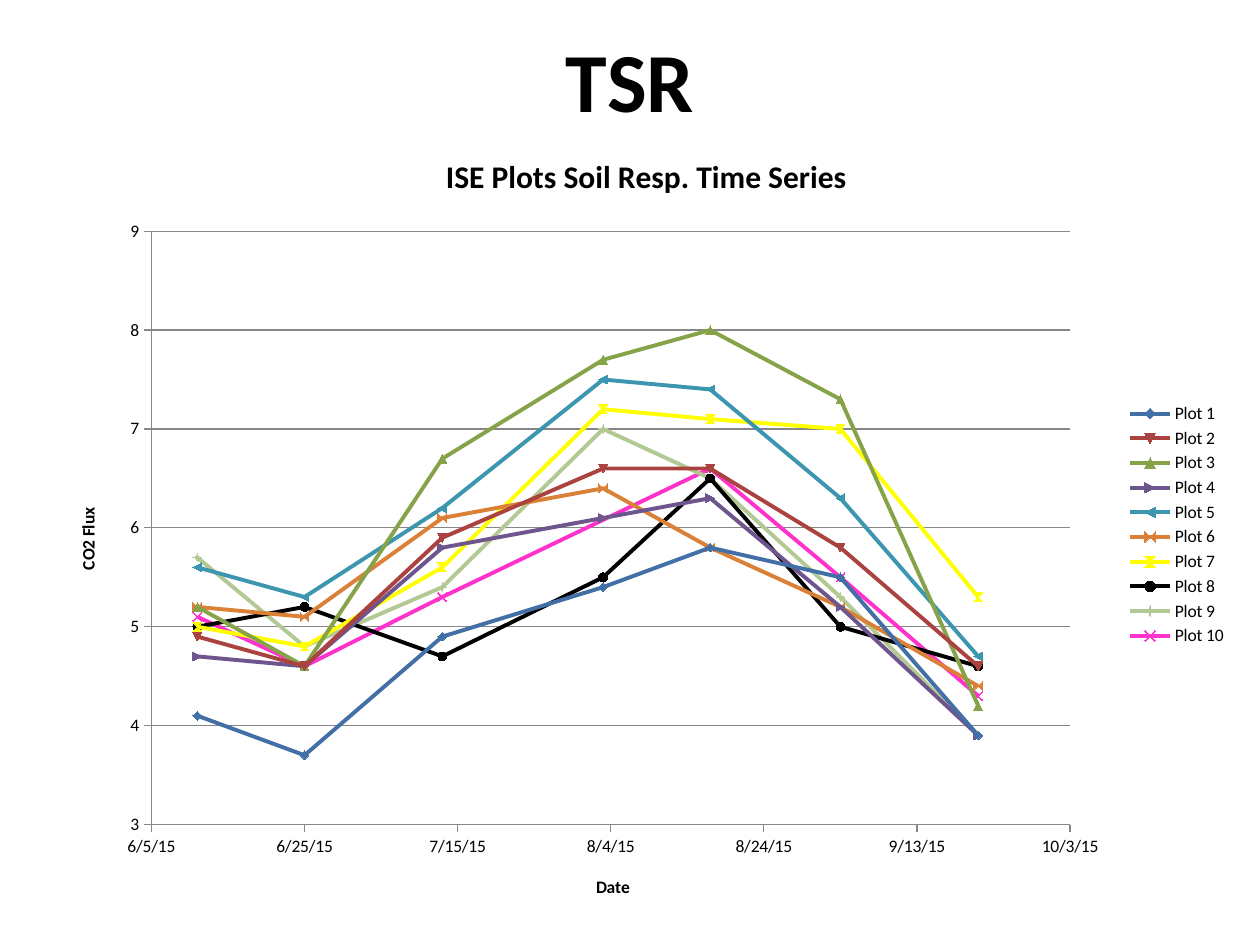
from lxml import etree
from pptx import Presentation
from pptx.chart.data import XyChartData
from pptx.dml.color import RGBColor
from pptx.enum.chart import XL_CHART_TYPE, XL_LEGEND_POSITION, XL_MARKER_STYLE, XL_TICK_MARK
from pptx.enum.text import MSO_ANCHOR, PP_ALIGN
from pptx.oxml.ns import qn
from pptx.util import Inches, Pt

FONT = "Calibri"
BLACK = RGBColor(0x00, 0x00, 0x00)
GRAY = RGBColor(0x86, 0x86, 0x86)
BLUE = RGBColor(0x42, 0x6F, 0xA6)
RED = RGBColor(0xAA, 0x43, 0x3F)
GREEN = RGBColor(0x87, 0xA3, 0x4A)
PURPLE = RGBColor(0x6F, 0x55, 0x8D)
TEAL = RGBColor(0x3C, 0x96, 0xAF)
ORANGE = RGBColor(0xDA, 0x81, 0x37)
YELLOW = RGBColor(0xFF, 0xFF, 0x00)
LIGHT_GREEN = RGBColor(0xB3, 0xC9, 0x94)
PINK = RGBColor(0xFF, 0x33, 0xCC)

# Sampling days counted from 6/5/15, the start of the date axis
START_DATE = 42160
SAMPLE_DAYS = [6, 20, 38, 59, 73, 90, 108]

# Flux per plot on each sampling day; None is a missing sample
PLOTS = [
    (BLUE, [4.1, 3.7, 4.9, 5.4, 5.8, 5.5, 3.9]),
    (RED, [4.9, 4.6, 5.9, 6.6, 6.6, 5.8, 4.6]),
    (GREEN, [5.2, 4.6, 6.7, 7.7, 8, 7.3, 4.2]),
    (PURPLE, [4.7, 4.6, 5.8, 6.1, 6.3, 5.2, 3.9]),
    (TEAL, [5.6, 5.3, 6.2, 7.5, 7.4, 6.3, 4.7]),
    (ORANGE, [5.2, 5.1, 6.1, 6.4, 5.8, 5.2, 4.4]),
    (YELLOW, [5, 4.8, 5.6, 7.2, 7.1, 7, 5.3]),
    (BLACK, [5, 5.2, 4.7, 5.5, 6.5, 5, 4.6]),
    (LIGHT_GREEN, [5.7, 4.8, 5.4, 7, 6.5, 5.3, 3.9]),
    (PINK, [5.1, 4.6, 5.3, None, 6.6, 5.5, 4.3]),
]


def write_text(text_frame, text, size):
    paragraph = text_frame.paragraphs[0]
    paragraph.alignment = PP_ALIGN.CENTER
    run = paragraph.add_run()
    run.text = text
    run.font.name = FONT
    run.font.size = Pt(size)
    run.font.bold = True
    run.font.color.rgb = BLACK


presentation = Presentation()
presentation.slide_width = Inches(10)
presentation.slide_height = Inches(7.5)
slide = presentation.slides.add_slide(presentation.slide_layouts[6])

# Slide title
title_box = slide.shapes.add_textbox(Inches(0.5), Inches(0), Inches(9), Inches(1.25))
title_box.text_frame.word_wrap = True
title_box.text_frame.vertical_anchor = MSO_ANCHOR.MIDDLE
write_text(title_box.text_frame, "TSR", 48)

# Chart data
chart_data = XyChartData()
for number, (color, fluxes) in enumerate(PLOTS, start=1):
    plot_series = chart_data.add_series(f"Plot {number}")
    for day, flux in zip(SAMPLE_DAYS, fluxes):
        if flux is not None:
            plot_series.add_data_point(START_DATE + day, flux)

chart = slide.shapes.add_chart(
    XL_CHART_TYPE.XY_SCATTER_LINES,
    Inches(0.42), Inches(1), Inches(9.42), Inches(6.33), chart_data,
).chart
chart.font.name = FONT
chart.font.size = Pt(10)
chart.font.color.rgb = BLACK
chart.plots[0].vary_by_categories = False
write_text(chart.chart_title.text_frame, "ISE Plots Soil Resp. Time Series", 18)

# Legend
chart.has_legend = True
chart.legend.position = XL_LEGEND_POSITION.RIGHT
chart.legend.include_in_layout = False

# Lines and markers
for series, (color, fluxes) in zip(chart.plots[0].series, PLOTS):
    series.smooth = False
    series.format.line.color.rgb = color
    series.format.line.width = Pt(2.25)
    series.marker.style = XL_MARKER_STYLE.AUTOMATIC
    series.marker.size = 5
    series.marker.format.fill.solid()
    series.marker.format.fill.fore_color.rgb = color
    series.marker.format.line.color.rgb = color

# Axes
axis_settings = [
    (chart.category_axis, "Date", "m/d/yy", {
        "minimum_scale": START_DATE, "maximum_scale": START_DATE + 120,
        "major_unit": 20, "has_major_gridlines": False}),
    (chart.value_axis, "CO2 Flux", "General", {
        "minimum_scale": 3, "maximum_scale": 9,
        "major_unit": 1, "has_major_gridlines": True}),
]
for axis, title, number_format, settings in axis_settings:
    for name, value in settings.items():
        setattr(axis, name, value)
    axis.major_tick_mark = XL_TICK_MARK.OUTSIDE
    axis.minor_tick_mark = XL_TICK_MARK.NONE
    axis.tick_labels.number_format = number_format
    axis.tick_labels.number_format_is_linked = False
    axis.format.line.color.rgb = GRAY
    axis.format.line.width = Pt(0.75)
    write_text(axis.axis_title.text_frame, title, 10)
gridline = chart.value_axis.major_gridlines.format.line
gridline.color.rgb = GRAY
gridline.width = Pt(0.75)

# Fixed plot area, as fractions of the chart
plot_area = chart.plots[0]._element.getparent()
for old_layout in plot_area.findall(qn("c:layout")):
    plot_area.remove(old_layout)
layout = etree.Element(qn("c:layout"))
plot_area.insert(0, layout)
manual_layout = etree.SubElement(layout, qn("c:manualLayout"))
for tag, value in {
    "layoutTarget": "inner", "xMode": "edge", "yMode": "edge",
    "x": "0.083", "y": "0.132", "w": "0.774", "h": "0.744",
}.items():
    etree.SubElement(manual_layout, qn(f"c:{tag}")).set("val", value)

presentation.save("out.pptx")
